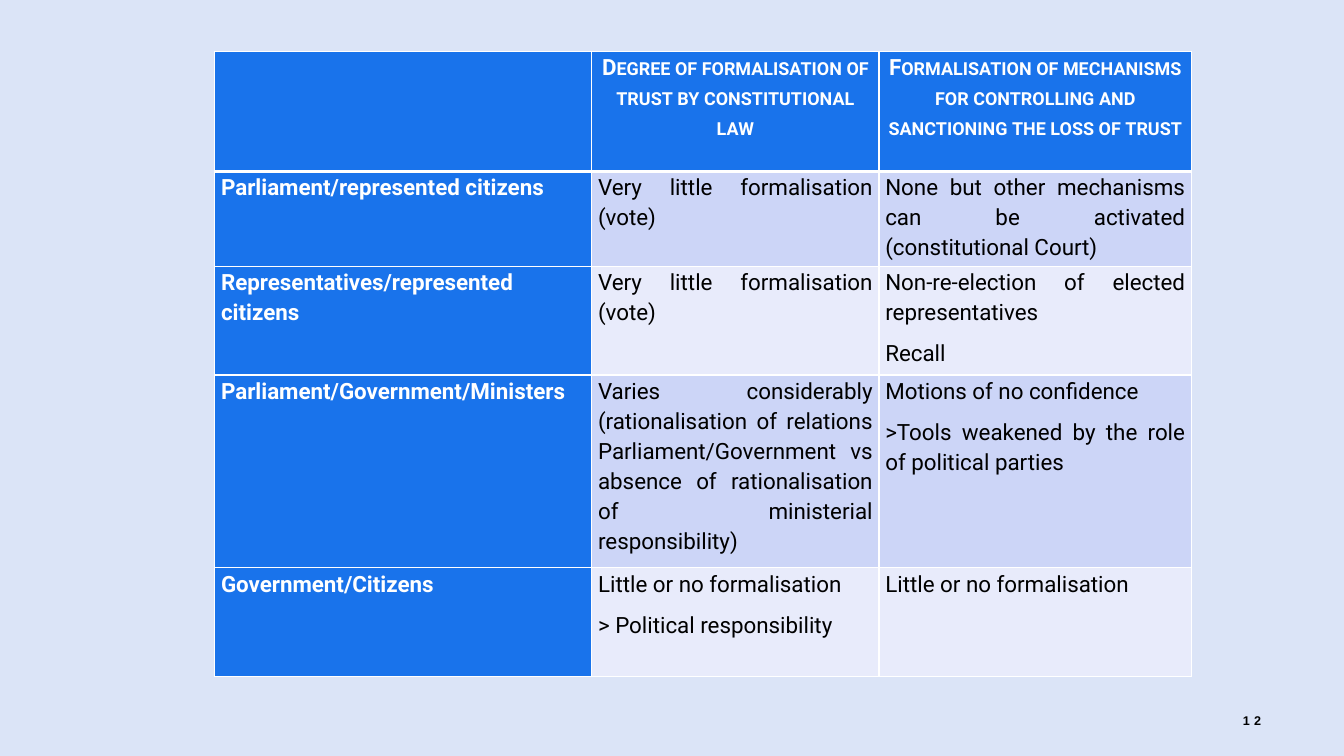
from lxml import etree
from pptx import Presentation
from pptx.dml.color import RGBColor
from pptx.enum import text
from pptx.oxml import ns
from pptx.util import Pt

BACKGROUND = RGBColor(0xDB, 0xE4, 0xF7)
BLUE = RGBColor(0x19, 0x73, 0xEB)
BANDS = RGBColor(0xCC, 0xD5, 0xF7), RGBColor(0xE8, 0xEB, 0xFB)
WHITE = RGBColor(0xFF, 0xFF, 0xFF)
BLACK = RGBColor(0, 0, 0)

COLUMN_WIDTHS = 269.3, 205.2, 223.2
ROW_HEIGHTS = 85.7, 67.7, 77.8, 137.5, 77.8
ROWS = [
    ("",
     "Degree of formalisation of trust by constitutional law",
     "Formalisation of mechanisms for controlling and sanctioning the loss of trust"),
    ("Parliament/represented citizens",
     "Very little formalisation (vote)",
     "None but other mechanisms can be activated (constitutional Court)"),
    ("Representatives/represented citizens",
     "Very little formalisation (vote)",
     "Non-re-election of elected representatives\nRecall"),
    ("Parliament/Government/Ministers",
     "Varies considerably (rationalisation of relations Parliament/Government "
     "vs absence of rationalisation of ministerial responsibility)",
     "Motions of no confidence\n>Tools weakened by the role of political parties"),
    ("Government/Citizens",
     "Little or no formalisation\n> Political responsibility",
     "Little or no formalisation"),
]


def style_font(para, name, size, color, bold, **extras):
    """Set the font of a paragraph, with extra character attributes."""
    font = para.font
    font.name, font.size, font.bold = name, Pt(size), bold
    font.color.rgb = color
    properties = para._p.pPr.find(ns.qn("a:defRPr"))
    for key, value in extras.items():
        properties.set(key, value)


def add_borders(cell, bottom_width):
    """Draw white borders around a cell."""
    properties = cell._tc.get_or_add_tcPr()
    widths = {"lnL": 1, "lnR": 1, "lnT": 1, "lnB": bottom_width}
    for index, (side, width) in enumerate(widths.items()):
        line = etree.Element(ns.qn(f"a:{side}"), w=str(Pt(width)))
        fill = etree.SubElement(line, ns.qn("a:solidFill"))
        etree.SubElement(fill, ns.qn("a:srgbClr"), val=str(WHITE))
        properties.insert(index, line)


def fill_cell(cell, words, row, column):
    """Write and style one cell according to its row and column."""
    header = row == 0
    strong = header or column == 0
    cell.margin_left = cell.margin_right = Pt(4.5)
    cell.margin_top = cell.margin_bottom = 0
    cell.fill.solid()
    cell.fill.fore_color.rgb = BLUE if strong else BANDS[(row - 1) % 2]
    add_borders(cell, 3 if header else 1)
    cell.text_frame.text = words
    for para in cell.text_frame.paragraphs:
        para.alignment = text.PP_ALIGN.CENTER if header else text.PP_ALIGN.JUSTIFY
        para.line_spacing = 1.15
        para.space_after = Pt(8)
        extras = {"cap": "small"} if header else {}
        style_font(para, "Roboto", 16, WHITE if strong else BLACK, strong, **extras)


def add_trust_table(page, left, top):
    """Add the table of trust relations with its corner at left, top."""
    frame = page.shapes.add_table(
        len(ROWS), len(COLUMN_WIDTHS), Pt(left), Pt(top),
        Pt(sum(COLUMN_WIDTHS)), Pt(sum(ROW_HEIGHTS)))
    table = frame.table
    table.first_row = table.horz_banding = False
    for column, width in zip(table.columns, COLUMN_WIDTHS):
        column.width = Pt(width)
    for row, height in zip(table.rows, ROW_HEIGHTS):
        row.height = Pt(height)
    for row, entries in enumerate(ROWS):
        for column, words in enumerate(entries):
            fill_cell(table.cell(row, column), words, row, column)


def add_page_number(page, left, top, width, height):
    """Add the page number, right-aligned in its box."""
    box = page.shapes.add_textbox(Pt(left), Pt(top), Pt(width), Pt(height))
    frame = box.text_frame
    frame.word_wrap = True
    frame.vertical_anchor = text.MSO_ANCHOR.MIDDLE
    para = frame.paragraphs[0]
    para.text = "12"
    para.alignment = text.PP_ALIGN.RIGHT
    style_font(para, "Arial", 9, BLACK, True, spc="300")


def main():
    """Build the slide and save it."""
    deck = Presentation()
    deck.slide_width, deck.slide_height = Pt(960), Pt(540)
    page = deck.slides.add_slide(deck.slide_layouts[6])
    page.background.fill.solid()
    page.background.fill.fore_color.rgb = BACKGROUND
    add_trust_table(page, 153.4, 36.7)
    add_page_number(page, 851, 500.4, 56.9, 28.8)
    deck.save("out.pptx")


if __name__ == "__main__":
    main()
